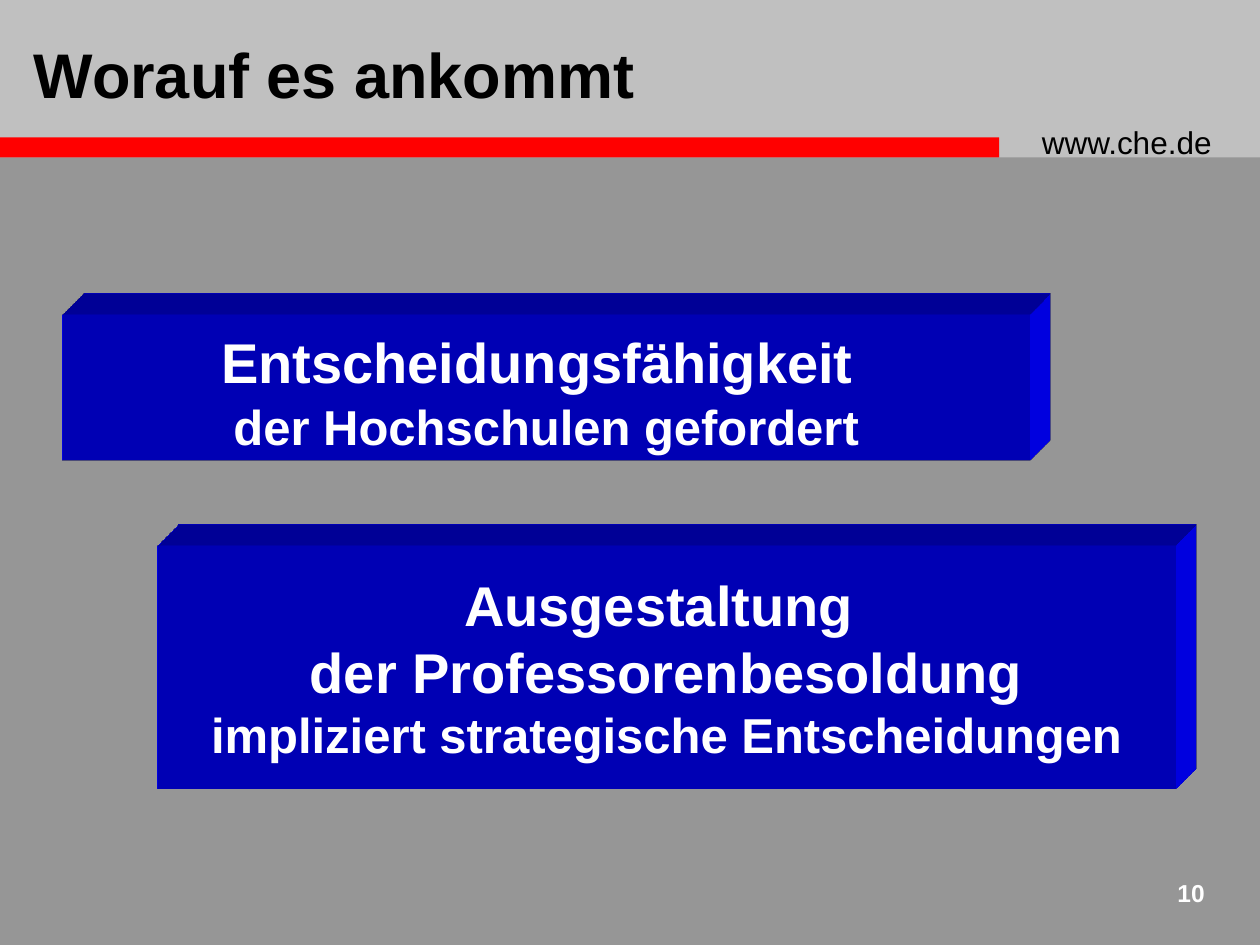
from dataclasses import dataclass

from lxml.etree import SubElement
from pptx import Presentation
from pptx.dml.color import RGBColor
from pptx.enum.shapes import MSO_SHAPE
from pptx.enum.text import MSO_ANCHOR, PP_ALIGN
from pptx.oxml.ns import qn
from pptx.util import Inches, Pt


@dataclass(frozen=True)
class Theme:
    """Hold the colours, font and type sizes of the slide."""
    font: str = "Arial"
    background: str = "969696"
    band: str = "C0C0C0"
    rule: str = "FF0000"
    slab: str = "0000FF"
    dark: str = "000000"
    light: str = "FFFFFF"
    title: int = 36
    heading: int = 32
    detail: int = 28
    address: int = 18
    number: int = 14


THEME = Theme()


def add_block(slide, left, top, width, height, color):
    """Add a plain rectangle without line or shadow."""
    shape = slide.shapes.add_shape(
        MSO_SHAPE.RECTANGLE, Inches(left), Inches(top), Inches(width), Inches(height))
    shape.shadow.inherit = False
    shape.fill.solid()
    shape.fill.fore_color.rgb = RGBColor.from_string(color)
    shape.line.fill.background()
    return shape


def extrude(shape, color):
    """Raise a shape towards the top right with an oblique extrusion."""
    properties = shape.element.spPr
    scene = SubElement(properties, qn("a:scene3d"))
    SubElement(scene, qn("a:camera"), prst="legacyObliqueTopRight")
    SubElement(scene, qn("a:lightRig"), rig="legacyFlat3", dir="b")
    solid = SubElement(properties, qn("a:sp3d"), extrusionH="430200",
                       prstMaterial="legacyMatte")
    for bevel in ("a:bevelT", "a:bevelB"):
        SubElement(solid, qn(bevel), w="13500", h="13500", prst="angle")
    extrusion = SubElement(solid, qn("a:extrusionClr"))
    SubElement(extrusion, qn("a:srgbClr"), val=color)


def format_run(run, size, color, bold=False):
    """Set the font of one run."""
    run.font.name = THEME.font
    run.font.size = Pt(size)
    run.font.bold = bold
    run.font.color.rgb = RGBColor.from_string(color)


def add_label(slide, box, text, size, color, bold=False,
              align=PP_ALIGN.LEFT, anchor=MSO_ANCHOR.TOP):
    """Add a one-line text box."""
    label = slide.shapes.add_textbox(*map(Inches, box))
    frame = label.text_frame
    frame.word_wrap = True
    frame.vertical_anchor = anchor
    frame.text = text
    frame.paragraphs[0].alignment = align
    format_run(frame.paragraphs[0].runs[0], size, color, bold)


def add_header(slide, left, top, width, height, title, address):
    """Add the title band with its red rule and web address."""
    add_block(slide, left, top, width, height, THEME.band)
    add_block(slide, left, top + height - 0.16, 7.93, 0.16, THEME.rule)
    add_label(slide, (left + 8.17, top + 0.93, 1.75, 0.4), address,
              THEME.address, THEME.dark)
    add_label(slide, (left + 0.17, top + 0.17, 7, 0.83), title, THEME.title,
              THEME.dark, bold=True, anchor=MSO_ANCHOR.MIDDLE)


def add_slab(slide, left, top, width, height, lines):
    """Add a raised slab with centred lines, each a list of text and size pairs."""
    slab = add_block(slide, left, top, width, height, THEME.slab)
    extrude(slab, THEME.slab)
    frame = slab.text_frame
    frame.word_wrap = False
    frame.vertical_anchor = MSO_ANCHOR.MIDDLE
    for index, line in enumerate(lines):
        paragraph = frame.add_paragraph() if index else frame.paragraphs[0]
        paragraph.alignment = PP_ALIGN.CENTER
        for text, size in line:
            run = paragraph.add_run()
            run.text = text
            format_run(run, size, THEME.light, bold=True)


def main():
    """Build the slide and save it."""
    presentation = Presentation()
    presentation.slide_width, presentation.slide_height = Inches(10), Inches(7.5)
    slide = presentation.slides.add_slide(presentation.slide_layouts[6])
    slide.background.fill.solid()
    slide.background.fill.fore_color.rgb = RGBColor.from_string(THEME.background)

    add_header(slide, 0, 0, 10, 1.25, "Worauf es ankommt", "www.che.de")
    add_slab(slide, 0.5, 2.5, 7.67, 1.16, [
        [("Entscheidungsfähigkeit", THEME.heading), (" ", THEME.title)],
        [("der Hochschulen gefordert", THEME.detail)],
    ])
    add_slab(slide, 1.25, 4.33, 8.08, 1.93, [
        [("Ausgestaltung ", THEME.heading)],
        [("der Professorenbesoldung", THEME.heading)],
        [("impliziert strategische Entscheidungen", THEME.detail)],
    ])
    add_label(slide, (9.08, 6.92, 0.58, 0.42), "10", THEME.number,
              THEME.light, bold=True, align=PP_ALIGN.RIGHT)
    presentation.save("out.pptx")


if __name__ == "__main__":
    main()
